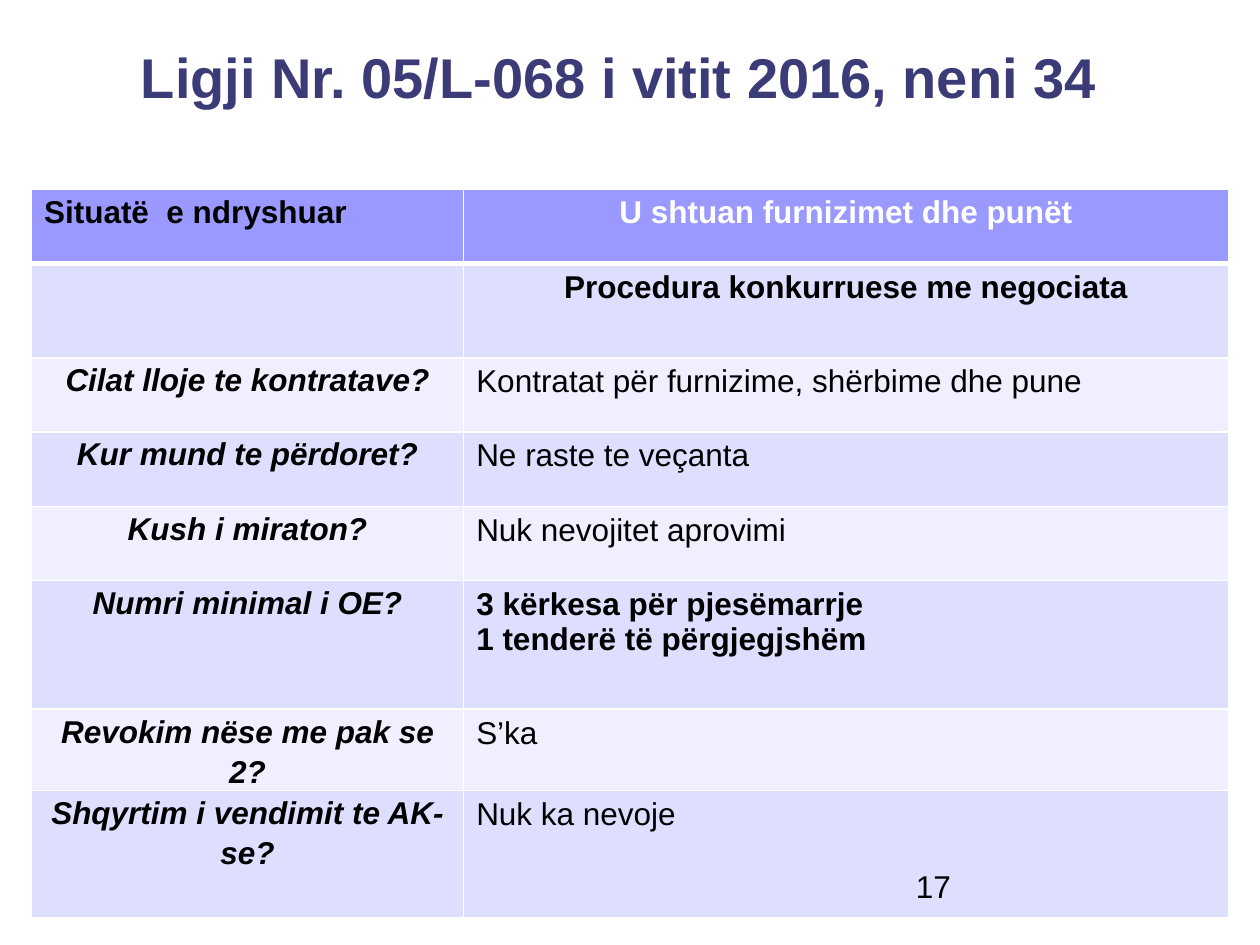
"""Build the slide on Law No. 05/L-068, article 34."""
import pptx
import pptx.dml.color
import pptx.enum.text
import pptx.oxml
import pptx.oxml.ns
import pptx.util

Inches = pptx.util.Inches
ALIGN = pptx.enum.text.PP_ALIGN
ANCHOR = pptx.enum.text.MSO_ANCHOR

COLORS = {
    "title": "3B3B77",
    "header": "9999FF",
    "dark band": "DEDEFF",
    "light band": "EFEFFF",
    "text": "000000",
    "white": "FFFFFF",
}

COLUMN_WIDTHS = [3.43, 6.07]
ROW_HEIGHTS = [0.59, 0.75, 0.59, 0.59, 0.59, 1.02, 0.64, 1.01]
HEADINGS = ["Situatë  e ndryshuar", "U shtuan furnizimet dhe punët"]
PROCEDURE = "Procedura konkurruese me negociata"
QUESTIONS = [
    ("Cilat lloje te kontratave?", ["Kontratat për furnizime, shërbime dhe pune"], False),
    ("Kur mund te përdoret?", ["Ne raste te veçanta"], False),
    ("Kush i miraton?", ["Nuk nevojitet aprovimi"], False),
    ("Numri minimal i OE?", ["3 kërkesa për pjesëmarrje", "1 tenderë të përgjegjshëm"], True),
    ("Revokim nëse me pak se 2?", ["S’ka"], False),
    ("Shqyrtim i vendimit te AK-se?", ["Nuk ka nevoje"], False),
]


class SlideBuilder:
    """Hold the style and the current slide, and add each kind of element."""

    font_name = "Arial"
    text_size = 18

    def __init__(self, slide):
        self.slide = slide

    def add_text(self, frame, lines, align=ALIGN.LEFT, size=text_size, color="text",
                 bold=False, italic=False, spacing=None):
        """Add one paragraph for each line."""
        frame.word_wrap = True
        for index, line in enumerate(lines):
            para = frame.add_paragraph() if index else frame.paragraphs[0]
            para.alignment = align
            para.space_before = pptx.util.Pt(0)
            if spacing:
                para.line_spacing = spacing
            span = para.add_run()
            span.text = line
            span.font.name = self.font_name
            span.font.size = pptx.util.Pt(size)
            span.font.bold = bold
            span.font.italic = italic
            span.font.color.rgb = pptx.dml.color.RGBColor.from_string(COLORS[color])

    def add_title(self, text, left, top, width, height):
        """Place and fill the title placeholder."""
        title = self.slide.shapes.title
        title.left, title.top = Inches(left), Inches(top)
        title.width, title.height = Inches(width), Inches(height)
        title.text_frame.vertical_anchor = ANCHOR.TOP
        title.text_frame.margin_top = Inches(0.1)
        self.add_text(title.text_frame, [text], ALIGN.CENTER, 32, "title", bold=True)

    def add_label(self, text, left, top, width, height):
        """Add a plain text box."""
        box = self.slide.shapes.add_textbox(
            Inches(left), Inches(top), Inches(width), Inches(height))
        self.add_text(box.text_frame, [text])

    def style_cell(self, cell, fill, top=1, bottom=1):
        """Give a cell white borders and a fill."""
        properties = cell._tc.get_or_add_tcPr()
        namespace = pptx.oxml.ns.nsdecls("a")
        for side, points in zip("LRTB", (1, 1, top, bottom)):
            properties.append(pptx.oxml.parse_xml(
                f'<a:ln{side} {namespace} w="{pptx.util.Pt(points)}"><a:solidFill>'
                f'<a:srgbClr val="{COLORS["white"]}"/></a:solidFill></a:ln{side}>'))
        cell.fill.solid()
        cell.fill.fore_color.rgb = pptx.dml.color.RGBColor.from_string(COLORS[fill])

    def add_table(self, left, top):
        """Add the table of questions and answers."""
        table = self.slide.shapes.add_table(
            len(ROW_HEIGHTS), len(COLUMN_WIDTHS), Inches(left), Inches(top),
            Inches(sum(COLUMN_WIDTHS)), Inches(sum(ROW_HEIGHTS))).table
        for column, width in zip(table.columns, COLUMN_WIDTHS):
            column.width = Inches(width)
        for index, height in enumerate(ROW_HEIGHTS):
            table.rows[index].height = Inches(height)
            band = "dark band" if index % 2 else "light band"
            for cell in table.rows[index].cells:
                self.style_cell(cell, band if index else "header",
                                top=3 if index == 1 else 1,
                                bottom=1 if index else 3)

        self.add_text(table.cell(0, 0).text_frame, HEADINGS[:1], bold=True)
        self.add_text(table.cell(0, 1).text_frame, HEADINGS[1:], ALIGN.CENTER,
                      color="white", bold=True)
        self.add_text(table.cell(1, 1).text_frame, [PROCEDURE], ALIGN.CENTER, bold=True)
        for index, (question, answers, bold) in enumerate(QUESTIONS, start=2):
            cell = table.cell(index, 0)
            cell.margin_left = cell.margin_right = Inches(0.07)
            cell.margin_top = cell.margin_bottom = 0
            self.add_text(cell.text_frame, [question], ALIGN.CENTER,
                          bold=True, italic=True, spacing=1.15)
            self.add_text(table.cell(index, 1).text_frame, answers, bold=bold)


def main():
    """Build and save the deck."""
    deck = pptx.Presentation()
    deck.slide_width, deck.slide_height = Inches(10), Inches(7.5)
    page = SlideBuilder(deck.slides.add_slide(deck.slide_layouts[5]))
    page.add_title("Ligji Nr. 05/L-068 i vitit 2016, neni 34", 0.5, 0.24, 8.83, 1.01)
    page.add_table(0.25, 1.5)
    page.add_label("17", 7.17, 6.83, 2.33, 0.5)
    deck.save("out.pptx")


if __name__ == "__main__":
    main()
